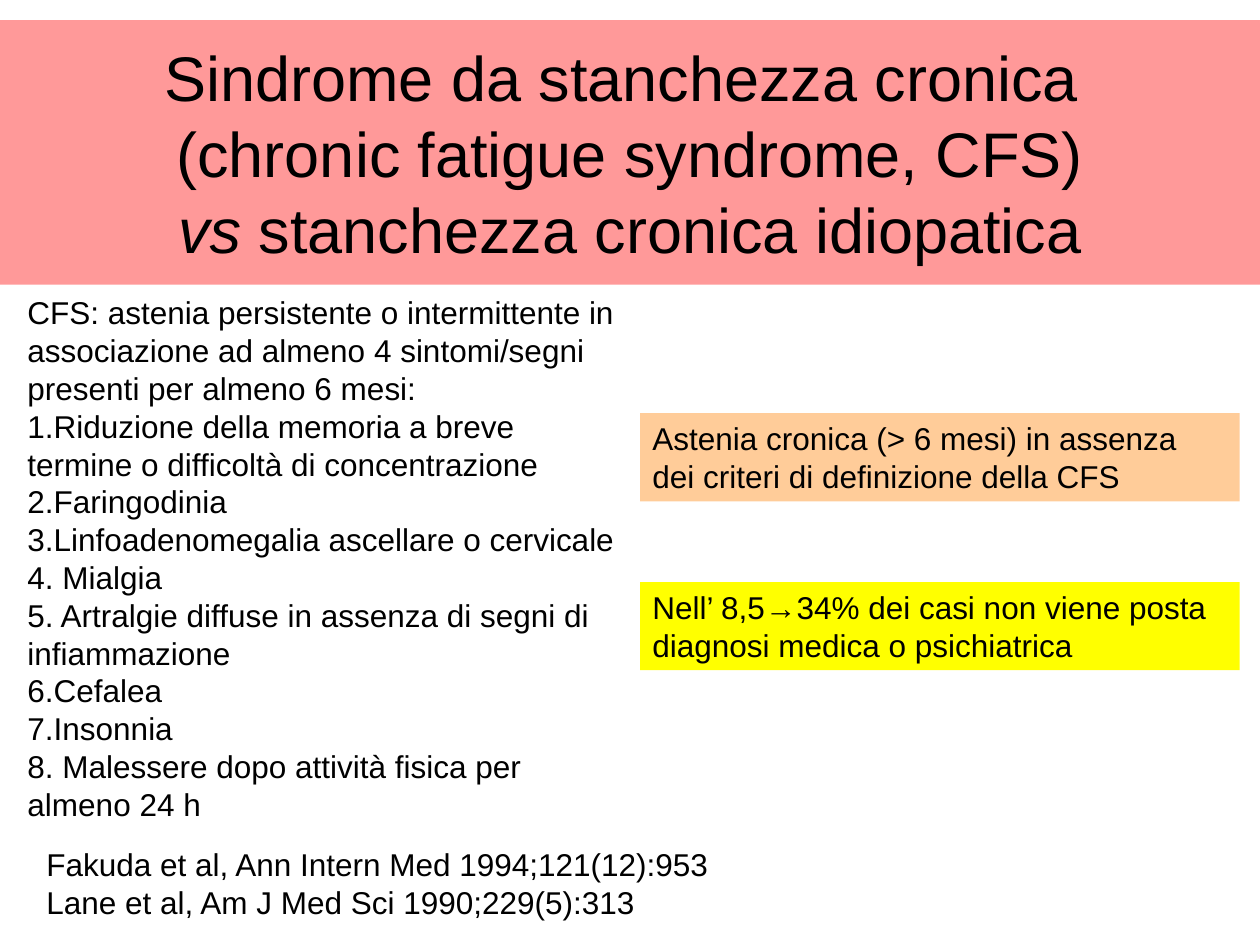
from dataclasses import dataclass

from pptx import Presentation
from pptx.dml.color import RGBColor
from pptx.enum.shapes import MSO_SHAPE as Shape
from pptx.enum.text import MSO_ANCHOR as Anchor, MSO_AUTO_SIZE as AutoSize, PP_ALIGN as Align
from pptx.util import Inches, Pt


@dataclass(frozen=True)
class Theme:
    font: str = "Arial"
    title_size: int = 36
    body_size: int = 18
    ink: str = "000000"
    title_fill: str = "FF9999"
    definition_fill: str = "FFCC99"
    finding_fill: str = "FFFF00"


THEME = Theme()

TITLE_LINES = [
    [("Sindrome da stanchezza cronica ", False)],
    [("(chronic fatigue syndrome, CFS)", False)],
    [("vs ", True), ("stanchezza cronica idiopatica", False)],
]
CRITERIA = [
    "CFS: astenia persistente o intermittente in associazione ad almeno 4 "
    "sintomi/segni presenti per almeno 6 mesi:",
    "1.Riduzione della memoria a breve termine o difficoltà di concentrazione",
    "2.Faringodinia",
    "3.Linfoadenomegalia ascellare o cervicale",
    "4. Mialgia",
    "5. Artralgie diffuse in assenza di segni di infiammazione",
    "6.Cefalea",
    "7.Insonnia",
    "8. Malessere dopo attività fisica per almeno 24 h",
]
REFERENCES = [
    "Fakuda et al, Ann Intern Med 1994;121(12):953",
    "Lane et al, Am J Med Sci 1990;229(5):313",
]
CALLOUTS = [
    (3.28, THEME.definition_fill,
     "Astenia cronica (> 6 mesi) in assenza dei criteri di definizione della CFS"),
    (4.62, THEME.finding_fill,
     "Nell’ 8,5→34% dei casi non viene posta diagnosi medica o psichiatrica"),
]


def add_span(para, text, size, italic=False):
    span = para.add_run()
    span.text = text
    span.font.name = THEME.font
    span.font.size = Pt(size)
    span.font.italic = italic
    span.font.color.rgb = RGBColor.from_string(THEME.ink)


def write_paragraphs(frame, texts):
    for index, text in enumerate(texts):
        para = frame.add_paragraph() if index else frame.paragraphs[0]
        para.alignment = Align.LEFT
        add_span(para, text, THEME.body_size)


def add_panel(page, bounds, fill):
    panel = page.shapes.add_shape(Shape.RECTANGLE, *map(Inches, bounds))
    panel.shadow.inherit = False
    panel.fill.solid()
    panel.fill.fore_color.rgb = RGBColor.from_string(fill)
    panel.line.fill.background()
    panel.text_frame.word_wrap = True
    return panel.text_frame


def add_title(page):
    frame = add_panel(page, (0, 0.16, 10, 2.1), THEME.title_fill)
    frame.margin_left = frame.margin_right = 0
    frame.margin_top = frame.margin_bottom = 0
    frame.vertical_anchor = Anchor.MIDDLE
    para = frame.paragraphs[0]
    para.alignment = Align.CENTER
    for index, line in enumerate(TITLE_LINES):
        if index:
            para.add_line_break()
        for text, italic in line:
            add_span(para, text, THEME.title_size, italic)


def add_text(page, bounds, texts, wrap=True):
    box = page.shapes.add_textbox(*map(Inches, bounds))
    box.text_frame.word_wrap = wrap
    box.text_frame.auto_size = AutoSize.SHAPE_TO_FIT_TEXT
    write_paragraphs(box.text_frame, texts)


def add_callout(page, top, fill, text):
    frame = add_panel(page, (5.08, top, 4.76, 0.7), fill)
    frame.auto_size = AutoSize.SHAPE_TO_FIT_TEXT
    frame.vertical_anchor = Anchor.TOP
    write_paragraphs(frame, [text])


def main():
    deck = Presentation()
    deck.slide_width, deck.slide_height = Inches(10), Inches(7.5)
    page = deck.slides.add_slide(deck.slide_layouts[6])
    add_title(page)
    add_text(page, (0.27, 6.66, 5.47, 0.7), REFERENCES, wrap=False)
    add_text(page, (0.12, 2.28, 4.96, 4.31), CRITERIA)
    for top, fill, text in CALLOUTS:
        add_callout(page, top, fill, text)
    deck.save("out.pptx")


if __name__ == "__main__":
    main()
